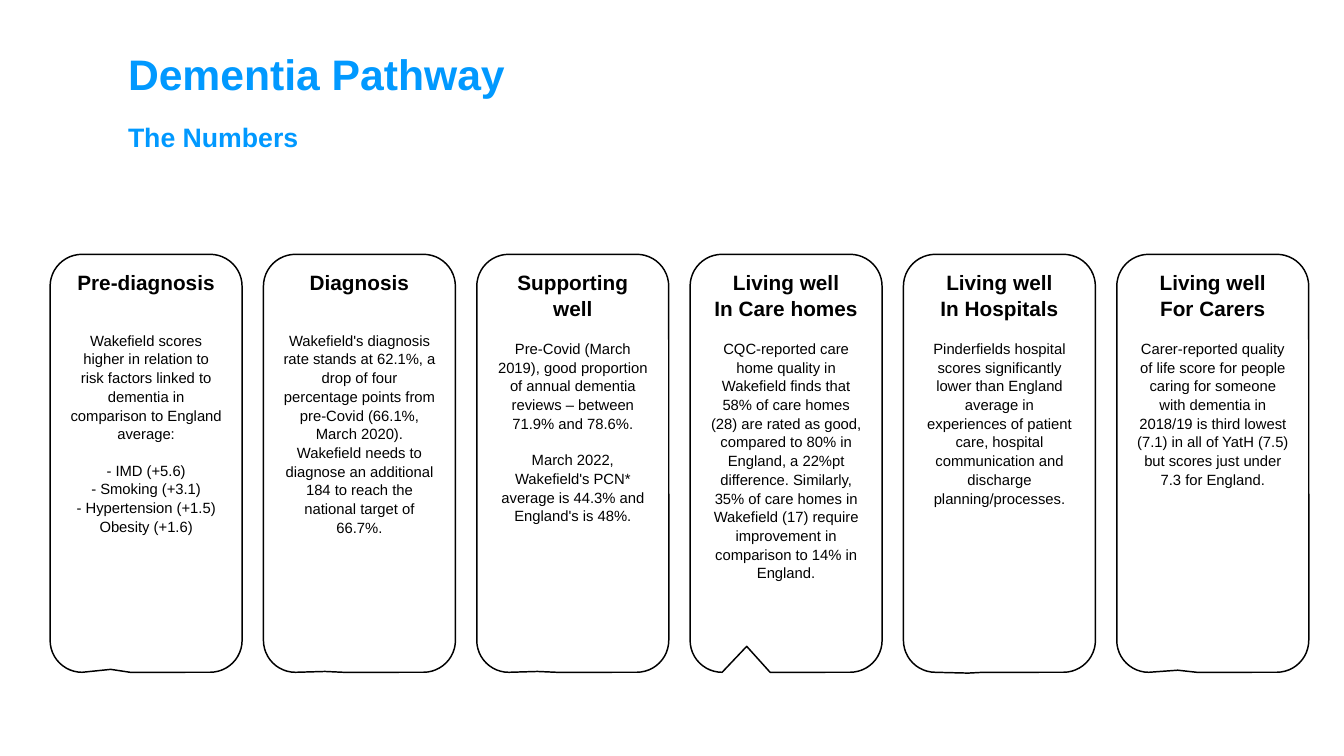
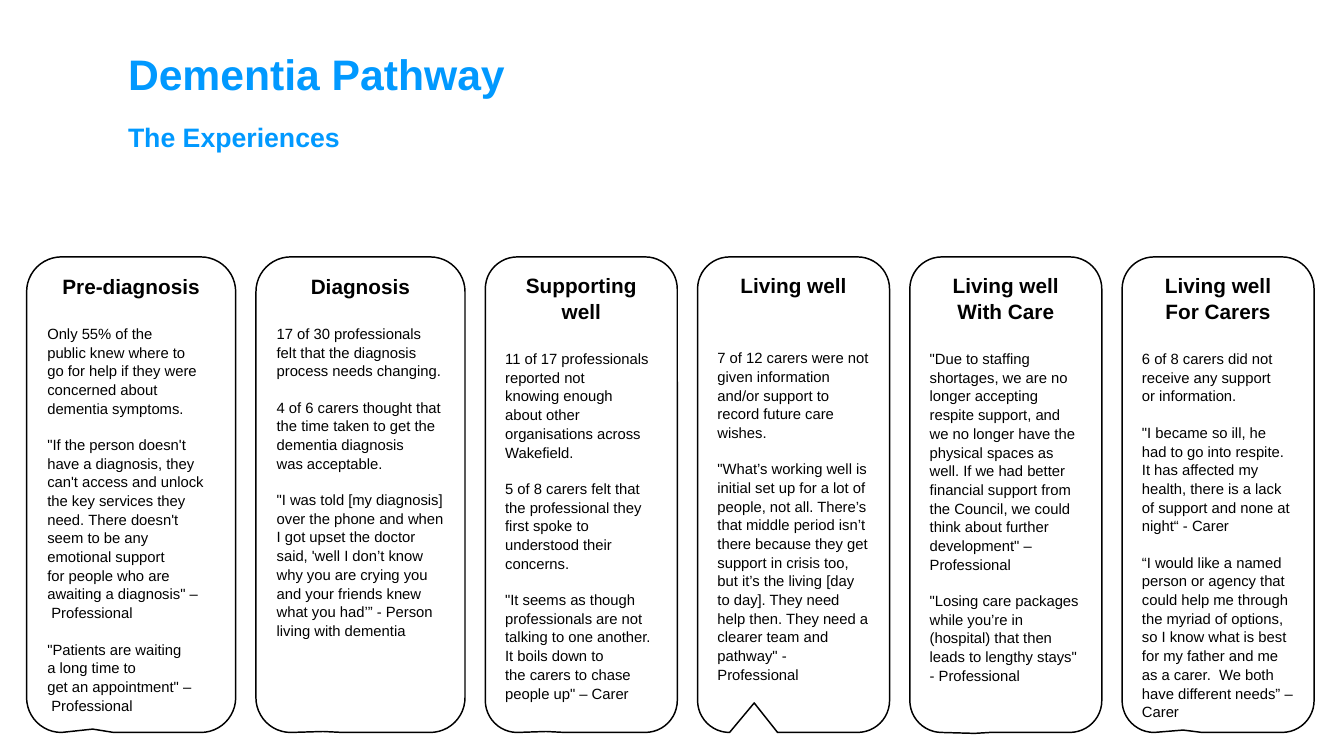
from pptx import Presentation
from pptx.dml.color import RGBColor
from pptx.enum.shapes import MSO_SHAPE
from pptx.enum.text import MSO_ANCHOR, MSO_AUTO_SIZE, PP_ALIGN
from pptx.util import Inches, Pt

CALLOUT = MSO_SHAPE.ROUNDED_RECTANGULAR_CALLOUT
TOP = MSO_ANCHOR.TOP
LEFT, CENTER = PP_ALIGN.LEFT, PP_ALIGN.CENTER

FONT = "Arial"
BLUE, BLACK, WHITE = "0199FF", "000000", "FFFFFF"
HEAD_SIZE, BODY_SIZE = 14, 10
LINE_SPACING = 1.05
BLOCK_GAP = 12
NBSP = chr(160)  # written as ~ in the texts below

TITLE = "Dementia Pathway"
TITLE_BOX = (1.2, 0.43, 8.81, 0.54)
# Pointer tip of each column's callout, as shares of its width and height
TIPS = [(-0.184, 0.493), (-0.179, 0.498), (-0.184, 0.498),
        (-0.205, 0.438), (-0.163, 0.502), (-0.182, 0.495)]

# Card: heading lines, gap under the heading in points, blocks of paragraphs
NUMBERS = [
    (["Pre-diagnosis"], 24, [
        ["Wakefield scores higher in relation to risk factors linked to "
         "dementia in comparison to England average:"],
        ["- IMD (+5.6)", "- Smoking (+3.1)", "- Hypertension (+1.5)",
         "Obesity (+1.6)"]]),
    (["Diagnosis"], 24, [
        ["Wakefield's diagnosis rate stands at 62.1%, a drop of four "
         "percentage points from pre-Covid (66.1%, March 2020).",
         "Wakefield needs to diagnose an additional 184 to reach the "
         "national target of 66.7%."]]),
    (["Supporting well"], 12, [
        ["Pre-Covid (March 2019), good proportion of annual dementia "
         "reviews – between 71.9% and 78.6%."],
        ["March 2022, Wakefield's PCN* average is 44.3% and England's "
         "is 48%."]]),
    (["Living well", "In Care homes"], 12, [
        ["CQC-reported care home quality in Wakefield finds that 58% of "
         "care homes (28) are rated as good, compared to 80% in England, "
         "a 22%pt difference. Similarly, 35% of care homes in Wakefield "
         "(17) require improvement in comparison to 14% in England."]]),
    (["Living well", "In Hospitals"], 12, [
        ["Pinderfields hospital scores significantly lower than England "
         "average in experiences of patient care, hospital communication "
         "and discharge planning/processes."]]),
    (["Living well", "For Carers"], 12, [
        ["Carer-reported quality of life score for people caring for "
         "someone with dementia in 2018/19 is third lowest (7.1) in all "
         "of YatH (7.5) but scores just under 7.3 for England."]]),
]

EXPERIENCES = [
    (["Pre-diagnosis"], 17, [
        ["Only 55% of the public~knew where to go~for help if they~were "
         "concerned~about dementia symptoms."],
        ["\"If the person doesn't have~a diagnosis,~they can't~access and "
         "unlock the~key~services they need.~There doesn't seem~to be~any "
         "emotional support for~people~who are awaiting a~diagnosis\" "
         "–~Professional"],
        ["\"Patients are waiting a~long time to get~an~appointment\" "
         "–~Professional"]]),
    (["Diagnosis"], 17, [
        ["17 of 30 professionals felt that the diagnosis process needs "
         "changing."],
        ["4 of 6 carers thought~that the time taken~to get the "
         "dementia~diagnosis was~acceptable."],
        ["\"I was told [my diagnosis] over the phone and when I got upset "
         "the doctor said, 'well I don’t know why you are crying you and "
         "your friends knew what you had’” - Person living with "
         "dementia"]]),
    (["Supporting well"], 17, [
        ["11 of 17 professionals reported not knowing~enough about~other "
         "organisations~across Wakefield."],
        ["5 of 8 carers felt that the professional they first spoke to "
         "understood their concerns."],
        ["\"It seems as though professionals are~not talking to one "
         "another. It boils down~to the~carers~to chase people up\" "
         "–~Carer"]]),
    (["Living well"], 34, [
        ["7 of 12 carers~were not given~information and/or~support to "
         "record~future care wishes."],
        ["\"What’s working well is initial set up for a lot of people, "
         "not all. There’s that middle period isn’t there because they "
         "get support in crisis too, but it’s the living [day to day]. "
         "They need help then. They need a clearer team and pathway\" - "
         "Professional"]]),
    (["Living well", "With Care"], 17, [
        ["\"Due to staffing shortages, we are no longer accepting respite "
         "support, and we no longer have the physical spaces as well. If "
         "we had better financial support from the Council, we could "
         "think about further development\" – Professional"],
        ["\"Losing care packages while you’re in (hospital) that then "
         "leads to lengthy stays\" - Professional"]]),
    (["Living well", "For Carers"], 17, [
        ["6 of 8 carers~did not receive~any support or~information."],
        ["\"I became so ill, he had to go into respite. It has affected "
         "my health, there is a lack of support and none at night“ - "
         "Carer"],
        ["“I would like a named person or agency that could help me "
         "through the myriad of options, so I know what is best for my "
         "father and me as a carer.  We both have different needs” – "
         "Carer"]]),
]

SLIDES = [
    dict(subtitle="The Numbers", cards=NUMBERS, align=CENTER, left=0.47,
         top=2.385, height=3.92, gap=0.2, widths=[1.8] * 6),
    dict(subtitle="The Experiences", cards=EXPERIENCES, align=LEFT, left=0.25,
         top=2.41, height=4.46, gap=0.19, widths=[1.96] * 2 + [1.8] * 4),
]


def rgb(color):
    return RGBColor.from_string(color)


def add_run(p, text, size, color, bold=False):
    r = p.add_run()
    r.text = text.replace("~", NBSP)
    r.font.name, r.font.size, r.font.bold = FONT, Pt(size), bold
    r.font.color.rgb = rgb(color)


def place_title(layout):
    """Set the title position that every slide takes from the layout."""
    title = layout.placeholders[0]
    title.left, title.top, title.width, title.height = map(Inches, TITLE_BOX)


def fill_title(slide, subtitle):
    tf = slide.shapes.title.text_frame
    tf.margin_left = tf.margin_top = tf.margin_right = tf.margin_bottom = 0
    tf.vertical_anchor, tf.auto_size = TOP, MSO_AUTO_SIZE.NONE
    p = tf.paragraphs[0]
    p.alignment, p.line_spacing = LEFT, Pt(36)
    add_run(p, TITLE, 28.8, BLUE, True)
    p.add_line_break()
    add_run(p, subtitle, 18, BLUE, True)


def card_lines(card, align):
    """Yield text, size, bold, alignment and space before per paragraph."""
    heading, heading_gap, blocks = card
    for text in heading:
        yield text, HEAD_SIZE, True, CENTER, 0
    for b, block in enumerate(blocks):
        for i, text in enumerate(block):
            space = 0 if i else BLOCK_GAP if b else heading_gap
            yield text, BODY_SIZE, False, align, space


def add_card(slide, box, tip, card, align):
    sp = slide.shapes.add_shape(CALLOUT, *map(Inches, box))
    sp.shadow.inherit = False
    sp.adjustments[0], sp.adjustments[1] = tip
    sp.fill.solid()
    sp.fill.fore_color.rgb = rgb(WHITE)
    sp.line.color.rgb = rgb(BLACK)
    sp.line.width = Pt(1)
    tf = sp.text_frame
    tf.word_wrap, tf.vertical_anchor = True, TOP
    for i, line in enumerate(card_lines(card, align)):
        text, size, bold, alignment, space = line
        p = tf.add_paragraph() if i else tf.paragraphs[0]
        p.alignment, p.line_spacing = alignment, LINE_SPACING
        if space:
            p.space_before = Pt(space)
        add_run(p, text, size, BLACK, bold)


def main():
    prs = Presentation()
    prs.slide_width, prs.slide_height = Inches(12.6), Inches(7.09)
    layout = prs.slide_layouts[5]
    place_title(layout)
    for page in SLIDES:
        slide = prs.slides.add_slide(layout)
        fill_title(slide, page["subtitle"])
        left = page["left"]
        for width, tip, card in zip(page["widths"], TIPS, page["cards"]):
            box = (left, page["top"], width, page["height"])
            add_card(slide, box, tip, card, page["align"])
            left += width + page["gap"]
    prs.save("out.pptx")


if __name__ == "__main__":
    main()
